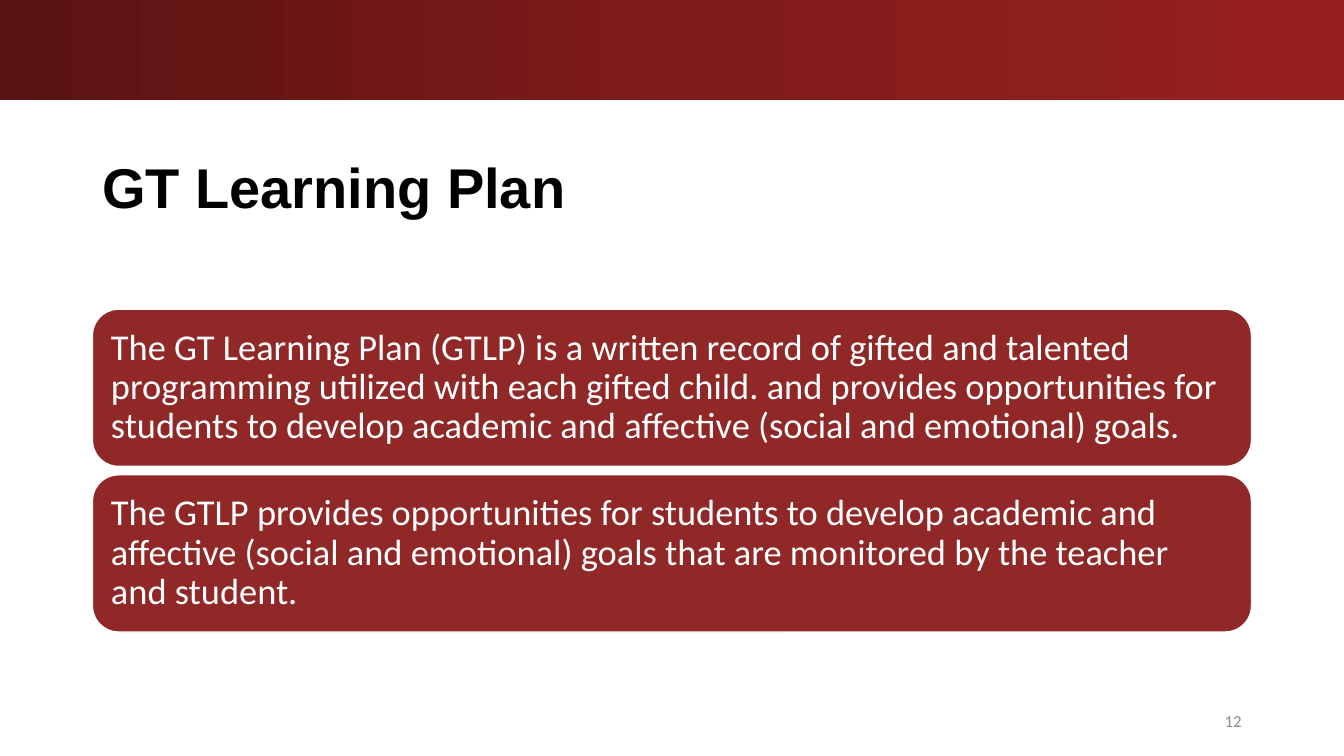
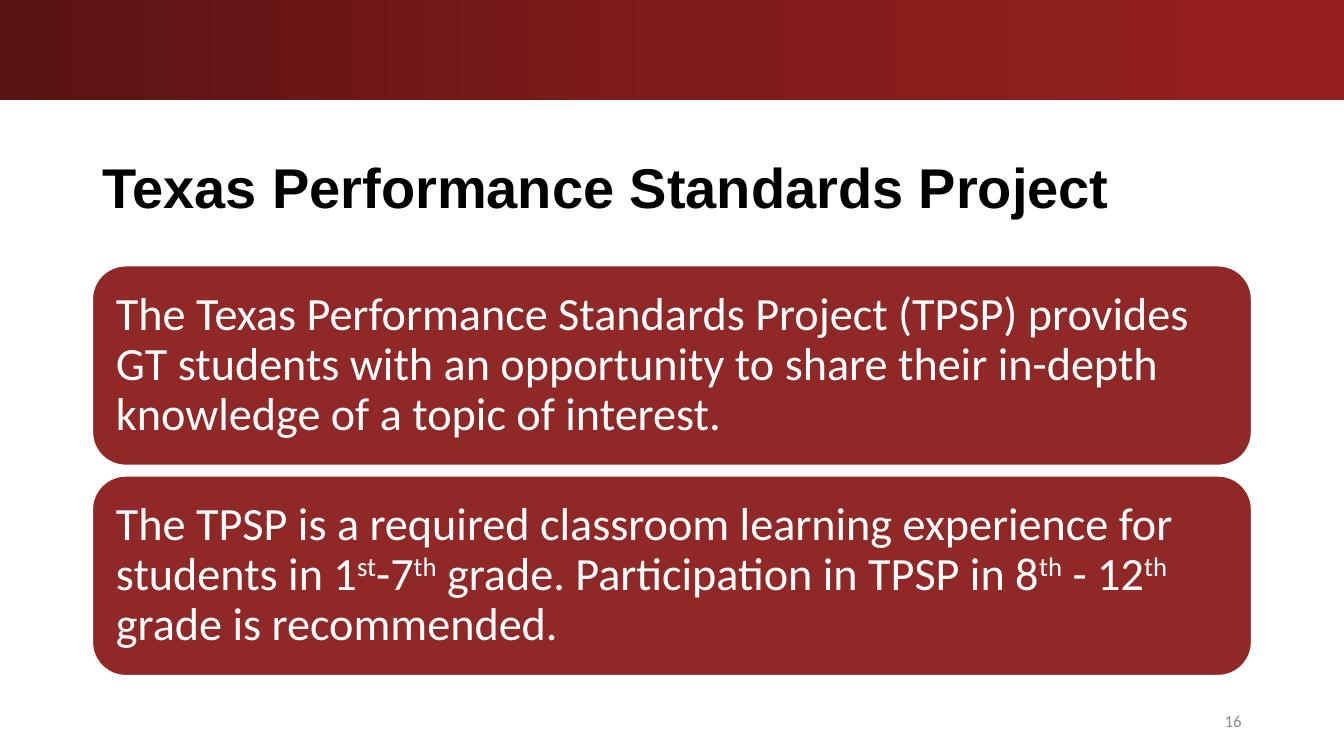
import copy

import pptx
import pptx.dml.color
import pptx.enum.shapes
import pptx.enum.text
import pptx.oxml.ns
import pptx.util

Cm, Pt = pptx.util.Cm, pptx.util.Pt
RGBColor = pptx.dml.color.RGBColor
MSO_SHAPE = pptx.enum.shapes.MSO_SHAPE
PP_ALIGN = pptx.enum.text.PP_ALIGN
MIDDLE = pptx.enum.text.MSO_ANCHOR.MIDDLE

# Content: each statement is a list of runs, ordinal endings are raised
SLIDES = [
    {
        "title": "GT Learning Plan",
        "number": "12",
        "size": 26,
        "statements": [
            ["The GT Learning Plan (GTLP) is a written record of gifted and "
             "talented programming utilized with each gifted child. and "
             "provides opportunities for students to develop academic and "
             "affective (social and emotional) goals."],
            ["The GTLP provides opportunities for students to develop "
             "academic and affective (social and emotional) goals that are "
             "monitored by the teacher and student."],
        ],
    },
    {
        "title": "Texas Performance Standards Project",
        "number": "16",
        "size": 33,
        "statements": [
            ["The Texas Performance Standards Project (TPSP) provides GT "
             "students with an opportunity to share their in-depth knowledge "
             "of a topic of interest."],
            ["The TPSP is a required classroom learning experience for "
             "students in 1", "st", "-7", "th",
             " grade. Participation in TPSP in 8", "th", " - 12", "th",
             " grade is recommended."],
        ],
    },
]
ORDINALS = ("st", "th")

# Shared style
BLACK = RGBColor(0x00, 0x00, 0x00)
WHITE = RGBColor(0xFF, 0xFF, 0xFF)
GREY = RGBColor(0x8C, 0x8C, 0x8C)
PANEL_RED = RGBColor(0x8F, 0x28, 0x27)
BAND_STOPS = [
    (0, RGBColor(0x59, 0x13, 0x12)),
    (0.5, RGBColor(0x7F, 0x1B, 0x1A)),
    (1, RGBColor(0x97, 0x20, 0x1F)),
]
TITLE_FONT, BODY_FONT = "Arial", "Calibri"

# Shared layout
SLIDE_W, SLIDE_H = Cm(33.87), Cm(19.05)
LEFT, CONTENT_W = Cm(2.33), Cm(29.21)
BAND_H = Cm(2.51)
TITLE_TOP, TITLE_H = Cm(3.33), Cm(2.95)
NUMBER_TOP, NUMBER_W, NUMBER_H = Cm(17.65), Cm(7.62), Cm(1.02)
STACK_MIDDLE = Cm(11.86)
# Panel measures as multiples of the text size
PANEL_H, PANEL_GAP, PANEL_INSET = 4.32, 0.23, 0.3


def write(shape, runs, font, size, color, bold=False,
          align=PP_ALIGN.LEFT, line_spacing=None):
    frame = shape.text_frame
    frame.word_wrap = True
    frame.vertical_anchor = MIDDLE
    paragraph = frame.paragraphs[0]
    paragraph.alignment = align
    paragraph.line_spacing = line_spacing
    for text in runs:
        run = paragraph.add_run()
        run.text = text
        run.font.name = font
        run.font.size = Pt(size)
        run.font.bold = bold
        run.font.color.rgb = color
        if text in ORDINALS:
            run.font._element.set("baseline", "30000")


def add_band(slide):
    band = slide.shapes.add_shape(MSO_SHAPE.RECTANGLE, 0, 0, SLIDE_W, BAND_H)
    band.shadow.inherit = False
    band.line.fill.background()
    band.fill.gradient()
    band.fill.gradient_angle = 0
    # A new gradient has two stops; add the middle one
    stop_list = next(band._element.iter(pptx.oxml.ns.qn("a:gsLst")))
    stop_list.insert(1, copy.deepcopy(stop_list[0]))
    for stop, (position, color) in zip(band.fill.gradient_stops, BAND_STOPS):
        stop.position = position
        stop.color.rgb = color


def add_frame(slide, title, number):
    add_band(slide)
    heading = slide.shapes.add_textbox(LEFT, TITLE_TOP, CONTENT_W, TITLE_H)
    write(heading, [title], TITLE_FONT, 40, BLACK, bold=True, line_spacing=0.9)
    page = slide.shapes.add_textbox(LEFT + CONTENT_W - NUMBER_W, NUMBER_TOP,
                                    NUMBER_W, NUMBER_H)
    write(page, [number], BODY_FONT, 12, GREY, align=PP_ALIGN.RIGHT)


def add_panels(slide, statements, size):
    height, gap, inset = (Pt(size * factor)
                          for factor in (PANEL_H, PANEL_GAP, PANEL_INSET))
    stack_h = len(statements) * (height + gap) - gap
    top = STACK_MIDDLE - stack_h // 2
    for row, runs in enumerate(statements):
        panel = slide.shapes.add_shape(
            MSO_SHAPE.ROUNDED_RECTANGLE, LEFT, top + row * (height + gap),
            CONTENT_W, height)
        panel.shadow.inherit = False
        panel.fill.solid()
        panel.fill.fore_color.rgb = PANEL_RED
        panel.line.color.rgb = WHITE
        panel.line.width = Pt(1)
        frame = panel.text_frame
        frame.margin_left = frame.margin_right = inset
        frame.margin_top = frame.margin_bottom = inset
        write(panel, runs, BODY_FONT, size, WHITE, line_spacing=0.9)


def main():
    deck = pptx.Presentation()
    deck.slide_width, deck.slide_height = SLIDE_W, SLIDE_H
    for content in SLIDES:
        slide = deck.slides.add_slide(deck.slide_layouts[6])
        add_frame(slide, content["title"], content["number"])
        add_panels(slide, content["statements"], content["size"])
    deck.save("out.pptx")


if __name__ == "__main__":
    main()
